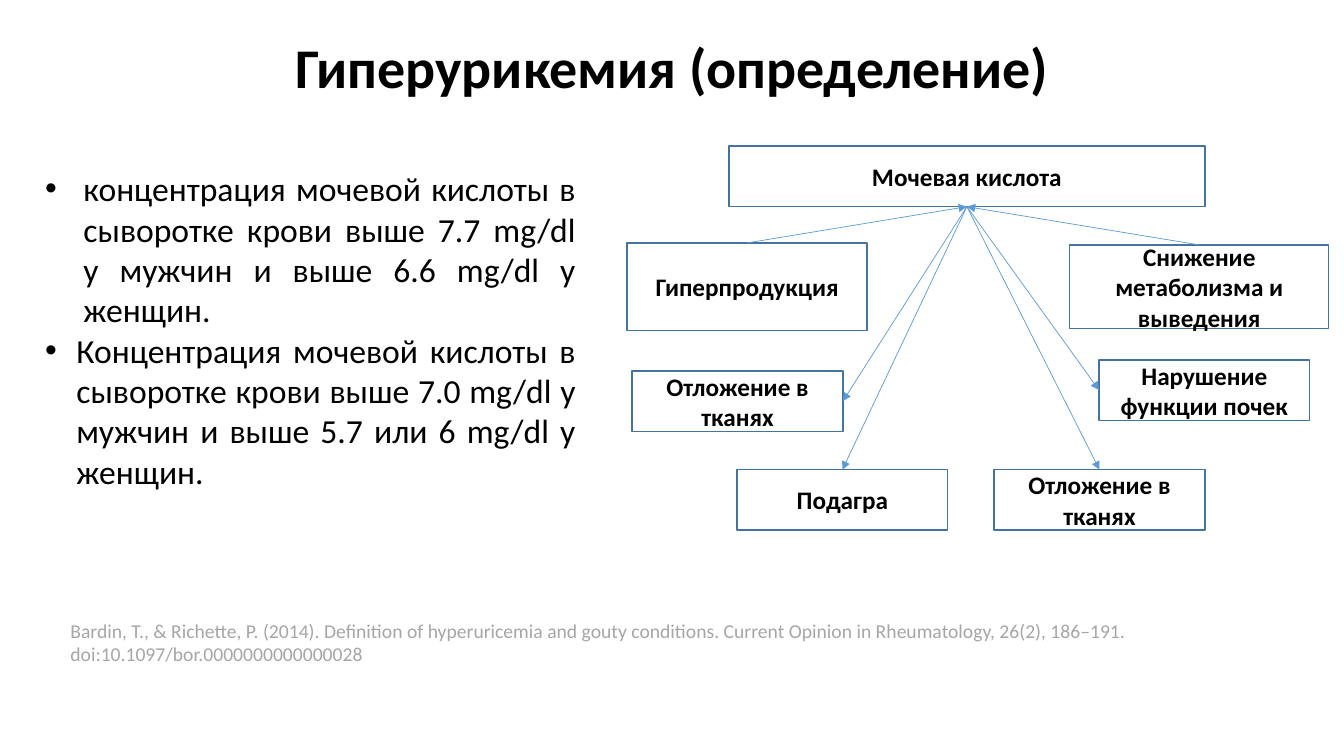
from lxml import etree
from pptx import Presentation
from pptx import util as u
from pptx.dml.color import RGBColor
from pptx.enum import shapes, text
from pptx.oxml.ns import qn

BLACK = RGBColor(0x00, 0x00, 0x00)
GREY = RGBColor(0xA6, 0xA6, 0xA6)
EDGE = RGBColor(0x43, 0x73, 0x9E)
BLUE = RGBColor(0x5B, 0x9B, 0xD5)
PX = 9144
FONT = "Calibri"
TOP, LEFT, BOTTOM, RIGHT = range(4)


class Deck:
    """Holds the style and the current slide, with lengths in px of 1/100 inch."""

    def __init__(self, wide, high):
        self.prs = Presentation()
        self.prs.slide_width = u.Emu(wide * PX)
        self.prs.slide_height = u.Emu(high * PX)
        self.slide = self.prs.slides.add_slide(self.prs.slide_layouts[5])

    def scale(self, *area):
        return [u.Emu(n * PX) for n in area]

    def put(self, par, words, size, color=BLACK, bold=False):
        run = par.add_run()
        run.text = words
        run.font.name = FONT
        run.font.size = u.Pt(size)
        run.font.bold = bold
        run.font.color.rgb = color

    def title(self, area, words):
        head = self.slide.shapes.title
        head.left, head.top, head.width, head.height = self.scale(*area)
        frame = head.text_frame
        frame.auto_size = text.MSO_AUTO_SIZE.NONE
        frame.vertical_anchor = text.MSO_ANCHOR.MIDDLE
        par = frame.paragraphs[0]
        par.alignment = text.PP_ALIGN.CENTER
        par.line_spacing = 0.9
        self.put(par, words, 40, bold=True)

    def frame(self, area):
        frame = self.slide.shapes.add_textbox(*self.scale(*area)).text_frame
        frame.word_wrap = True
        return frame

    def note(self, area, words):
        self.put(self.frame(area).paragraphs[0], words, 14, GREY)

    def bullets(self, area, items):
        frame = self.frame(area)
        for at, (indent, words) in enumerate(items):
            par = frame.add_paragraph() if at else frame.paragraphs[0]
            par.alignment = text.PP_ALIGN.JUSTIFY
            props = par._p.get_or_add_pPr()
            props.set("marL", str(indent * PX))
            props.set("indent", str(-indent * PX))
            etree.SubElement(props, qn("a:buFont")).set("typeface", "Arial")
            etree.SubElement(props, qn("a:buChar")).set("char", "•")
            self.put(par, words, 24)

    def box(self, area, words):
        box = self.slide.shapes.add_shape(
            shapes.MSO_SHAPE.RECTANGLE, *self.scale(*area))
        box.shadow.inherit = False
        box.fill.background()
        box.line.color.rgb = EDGE
        box.line.width = u.Pt(1)
        frame = box.text_frame
        frame.word_wrap = True
        frame.vertical_anchor = text.MSO_ANCHOR.MIDDLE
        par = frame.paragraphs[0]
        par.alignment = text.PP_ALIGN.CENTER
        self.put(par, words, 18, bold=True)
        return box

    def arrow(self, start, out, end, into):
        link = self.slide.shapes.add_connector(
            shapes.MSO_CONNECTOR.STRAIGHT, 0, 0, 0, 0)
        link.begin_connect(start, out)
        link.end_connect(end, into)
        link.line.color.rgb = BLUE
        link.line.width = u.Pt(0.5)
        props = link._element.spPr
        line = props.find(qn("a:ln"))
        etree.SubElement(line, qn("a:tailEnd")).set("type", "triangle")
        etree.SubElement(props, qn("a:effectLst"))

    def save(self):
        self.prs.save("out.pptx")


def main():
    deck = Deck(1333, 750)
    deck.title((0, -3, 1333, 145), "Гиперурикемия (определение)")
    deck.bullets((35, 162, 546, 333), [
        (38, "концентрация мочевой кислоты в сыворотке крови выше 7.7 mg/dl "
             "у мужчин и выше 6.6 mg/dl у женщин."),
        (31, "Концентрация мочевой кислоты в сыворотке крови выше 7.0 mg/dl "
             "у мужчин и выше 5.7 или 6 mg/dl у женщин."),
    ])
    deck.note((60, 609, 1243, 57),
              "Bardin, T., & Richette, P. (2014). Definition of hyperuricemia "
              "and gouty conditions. Current Opinion in Rheumatology, 26(2), "
              "186–191. doi:10.1097/bor.0000000000000028")

    acid = deck.box((723, 145, 472, 60), "Мочевая кислота")
    causes = [
        deck.box((622, 241, 238, 87), "Гиперпродукция"),
        deck.box((1061, 243, 257, 83), "Снижение метаболизма и выведения"),
    ]
    effects = [
        ((627, 368), "Отложение в тканях", RIGHT),
        ((731, 466), "Подагра", TOP),
        ((986, 466), "Отложение в тканях", TOP),
        ((1090, 357), "Нарушение функции почек", LEFT),
    ]
    for place, words, side in effects:
        deck.arrow(acid, BOTTOM, deck.box((*place, 209, 60), words), side)
    for cause in causes:
        deck.arrow(cause, TOP, acid, BOTTOM)
    deck.save()


if __name__ == "__main__":
    main()
